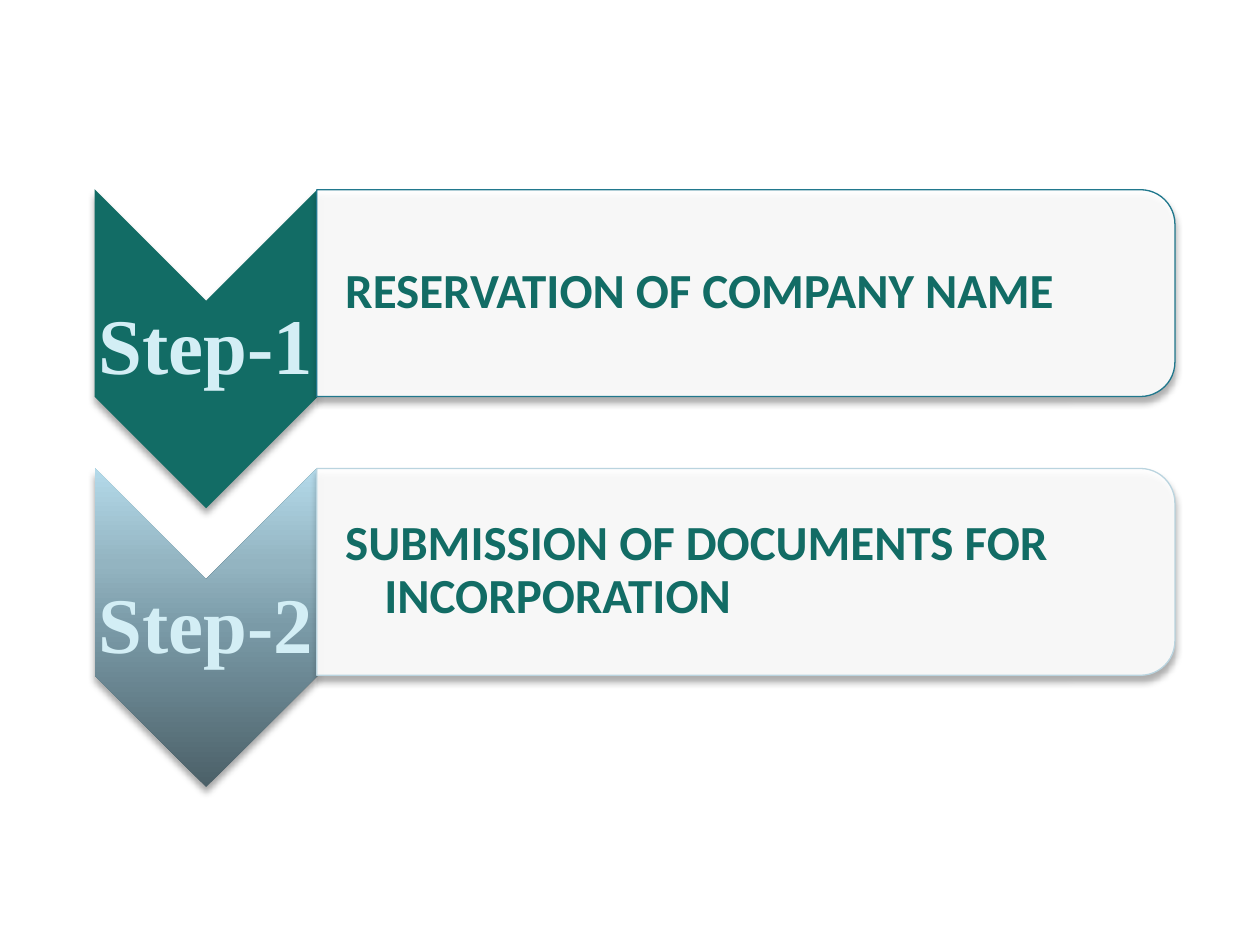
from lxml.etree import SubElement
from pptx import Presentation
from pptx.dml.color import RGBColor
from pptx.enum.shapes import MSO_SHAPE
from pptx.enum.text import MSO_ANCHOR, PP_ALIGN
from pptx.oxml import parse_xml
from pptx.oxml.ns import nsdecls, qn
from pptx.util import Cm, Pt

TEAL = RGBColor(0x12, 0x6C, 0x65)
BLUE = RGBColor(0x21, 0x78, 0x8D)
PALE_BLUE = RGBColor(0xBA, 0xD4, 0xDF)
ICE = RGBColor(0xD3, 0xEE, 0xF5)
WHITE = RGBColor(0xFF, 0xFF, 0xFF)
STEEL_STOPS = [
    (0, RGBColor(0x4B, 0x60, 0x68)),
    (50, RGBColor(0x7A, 0x9A, 0xA7)),
    (70, RGBColor(0x93, 0xB4, 0xC1)),
    (100, RGBColor(0xB4, 0xDA, 0xEA)),
]
STEP_PITCH = 5.62
STEPS = [
    ("Step-1", "RESERVATION OF COMPANY NAME", [(0, TEAL)], BLUE),
    ("Step-2", "SUBMISSION OF DOCUMENTS FOR INCORPORATION", STEEL_STOPS, PALE_BLUE),
]


class StepSlide:
    """Draws step chevrons and their panels on one slide."""

    def __init__(self, slide):
        self.slide = slide

    def add_turned_shape(self, kind, left, top, width, height):
        shape = self.slide.shapes.add_shape(kind, Cm(left), Cm(top), Cm(width), Cm(height))
        shape.rotation = 90
        return shape

    def add_shadow(self, shape):
        shape._element.spPr.append(parse_xml(
            f'<a:effectLst {nsdecls("a")}>'
            f'<a:outerShdw blurRad="{Pt(4)}" dist="{Pt(3)}" dir="5400000" rotWithShape="0">'
            '<a:srgbClr val="000000"><a:alpha val="35000"/></a:srgbClr>'
            '</a:outerShdw></a:effectLst>'))

    def add_chevron(self, top, stops):
        shape = self.add_turned_shape(MSO_SHAPE.CHEVRON, 0.94, top + 0.97, 6.43, 4.5)
        shape.line.fill.background()
        if len(stops) == 1:
            shape.fill.solid()
            shape.fill.fore_color.rgb = stops[0][1]
        else:
            self.fill_gradient(shape, stops)
        self.add_shadow(shape)

    def fill_gradient(self, shape, stops):
        stop_list = "".join(
            f'<a:gs pos="{position * 1000}"><a:srgbClr val="{color}"/></a:gs>'
            for position, color in stops)
        shape._element.spPr.find(qn("a:prstGeom")).addnext(parse_xml(
            f'<a:gradFill {nsdecls("a")} rotWithShape="0"><a:gsLst>{stop_list}</a:gsLst>'
            '<a:lin ang="16200000" scaled="0"/></a:gradFill>'))

    def add_panel(self, top, line_color):
        shape = self.add_turned_shape(
            MSO_SHAPE.ROUND_2_SAME_RECTANGLE, 12.95, top - 6.55, 4.17, 17.3)
        shape.fill.solid()
        shape.fill.fore_color.rgb = WHITE
        color = shape._element.spPr.find(qn("a:solidFill"))[0]
        SubElement(color, qn("a:alpha")).set("val", "90000")
        shape.line.color.rgb = line_color
        shape.line.width = Pt(0.75)
        self.add_shadow(shape)

    def add_text(self, text, frame, left_inset, inset, font_name, size, color):
        box = self.slide.shapes.add_textbox(*(Cm(length) for length in frame))
        text_frame = box.text_frame
        text_frame.word_wrap = True
        text_frame.vertical_anchor = MSO_ANCHOR.MIDDLE
        text_frame.margin_left = Cm(left_inset)
        text_frame.margin_right = text_frame.margin_top = text_frame.margin_bottom = Cm(inset)
        paragraph = text_frame.paragraphs[0]
        paragraph.text = text
        paragraph.line_spacing = 0.9
        paragraph.font.name = font_name
        paragraph.font.size = Pt(size)
        paragraph.font.bold = True
        paragraph.font.color.rgb = color
        return paragraph

    def add_step(self, top, label, description, stops, line_color):
        self.add_chevron(top, stops)
        paragraph = self.add_text(
            label, (1.9, top + 2.26, 4.5, 1.93), 0.08, 0.08, "Times New Roman", 45, ICE)
        paragraph.alignment = PP_ALIGN.CENTER
        self.add_panel(top, line_color)
        paragraph = self.add_text(
            description, (6.4, top + 0.2, 17.09, 3.76), 0.56, 0.05, "Calibri", 28, TEAL)
        paragraph.level = 1
        properties = paragraph._p.get_or_add_pPr()
        properties.set("marL", str(Cm(0.79)))
        properties.set("indent", str(-Cm(0.79)))


def main():
    presentation = Presentation()
    presentation.slide_width = Cm(25.4)
    presentation.slide_height = Cm(19.05)
    step_slide = StepSlide(presentation.slides.add_slide(presentation.slide_layouts[6]))
    for index, step in enumerate(STEPS):
        step_slide.add_step(3.81 + index * STEP_PITCH, *step)
    presentation.save("out.pptx")


if __name__ == "__main__":
    main()
